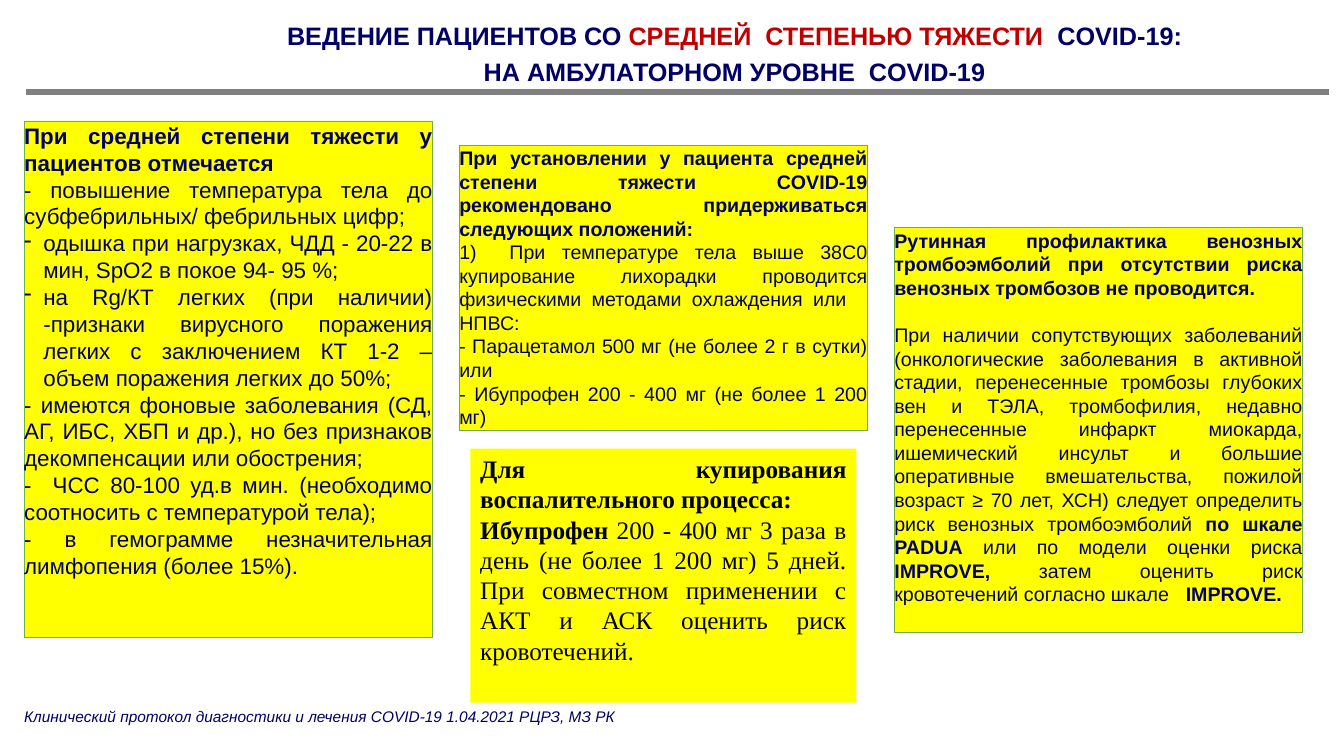
import pptx
import pptx.util
import lxml.etree
from pptx.dml.color import RGBColor
from pptx.enum.shapes import MSO_SHAPE
from pptx.enum.text import MSO_ANCHOR, PP_ALIGN
from pptx.oxml.ns import qn
from pptx.util import Inches, Pt

NAVY = RGBColor(0x00, 0x00, 0x66)
RED = RGBColor(0xC0, 0x00, 0x00)
BLACK = RGBColor(0x00, 0x00, 0x00)
WHITE = RGBColor(0xFF, 0xFF, 0xFF)
GRAY = RGBColor(0x80, 0x80, 0x80)
YELLOW = RGBColor(0xFF, 0xFF, 0x00)
GREEN = RGBColor(0x70, 0xAD, 0x47)

# Three-column grid, in inches
LEFT, RIGHT, COLUMN = 0.24, 12.92, 4.05
PITCH = (RIGHT - LEFT - COLUMN) / 2
HANG = 0.19

# Stars enclose bold parts; a leading bullet sign marks a hanging dash
SYMPTOMS = [
    "*При средней степени тяжести у пациентов отмечается*",
    "- повышение температура тела до субфебрильных/ фебрильных цифр;",
    "•одышка при нагрузках, ЧДД - 20-22 в мин, SpO2 в покое 94- 95 %;",
    "•на Rg/КТ легких (при наличии) -признаки вирусного поражения легких c "
    "заключением КТ 1-2 – объем поражения легких до 50%;",
    "- имеются фоновые заболевания (СД, АГ, ИБС, ХБП и др.), но без признаков "
    "декомпенсации или обострения;",
    "-  ЧСС 80-100 уд.в мин. (необходимо соотносить с температурой тела);",
    "- в гемограмме незначительная лимфопения (более 15%).",
]
FEVER = [
    "*При установлении у пациента средней степени тяжести COVID-19 "
    "рекомендовано придерживаться следующих положений:*",
    "1)  При температуре тела выше 38С0 купирование лихорадки проводится "
    "физическими методами охлаждения или   НПВС:",
    "- Парацетамол 500 мг (не более 2 г в сутки) или",
    "- Ибупрофен 200 - 400 мг (не более 1 200 мг)",
]
INFLAMMATION = [
    "*Для купирования воспалительного процесса:*",
    "*Ибупрофен* 200 - 400 мг 3 раза в день (не более 1 200 мг) 5 дней. "
    "При совместном применении с АКТ и АСК оценить риск кровотечений.",
]
THROMBOSIS = [
    "*Рутинная профилактика венозных тромбоэмболий при отсутствии риска "
    "венозных тромбозов не проводится.*",
    "При наличии сопутствующих заболеваний (онкологические заболевания в "
    "активной стадии, перенесенные тромбозы глубоких вен и ТЭЛА, тромбофилия, "
    "недавно перенесенные инфаркт миокарда, ишемический инсульт и большие "
    "оперативные вмешательства, пожилой возраст ≥ 70 лет, ХСН) следует "
    "определить риск венозных тромбоэмболий *по шкале PADUА *или по модели "
    "оценки риска *IMPROVE,* затем оценить риск кровотечений согласно "
    "шкале   *IMPROVE.*",
]
TITLE = [
    "ВЕДЕНИЕ ПАЦИЕНТОВ СО *СРЕДНЕЙ  СТЕПЕНЬЮ ТЯЖЕСТИ  *COVID-19:",
    "НА АМБУЛАТОРНОМ УРОВНЕ  COVID-19",
]
SOURCE = "Клинический протокол диагностики и лечения COVID-19 1.04.2021 РЦРЗ, МЗ РК"


def add_dash(para):
    properties = para._p.get_or_add_pPr()
    properties.set("marL", str(Inches(HANG)))
    properties.set("indent", str(-Inches(HANG)))
    lxml.etree.SubElement(properties, qn("a:buChar")).set("char", "-")


def write(frame, lines, size, align, color=NAVY, font="Arial"):
    """Fill the frame; yield each run with whether stars enclose it."""
    frame.word_wrap = True
    frame.vertical_anchor = MSO_ANCHOR.TOP
    for index, line in enumerate(lines):
        para = frame.add_paragraph() if index else frame.paragraphs[0]
        para.alignment = align
        if line.startswith("•"):
            add_dash(para)
        for part, text in enumerate(line.lstrip("•").split("*")):
            if text:
                span = para.add_run()
                span.text = text
                span.font.name, span.font.size = font, Pt(size)
                span.font.color.rgb = color
                yield span, part % 2 == 1


def add_box(page, box, fill, line=None, width=0.5):
    shape = page.shapes.add_shape(MSO_SHAPE.RECTANGLE, *map(Inches, box))
    shape.shadow.inherit = False
    shape.fill.solid()
    shape.fill.fore_color.rgb = fill
    if line is None:
        shape.line.fill.background()
    else:
        shape.line.color.rgb = line
        shape.line.width = Pt(width)
    return shape


def add_card(page, box, lines, size):
    """Bordered card whose text runs up to its edges."""
    frame = add_box(page, box, YELLOW, GREEN).text_frame
    frame.margin_left = frame.margin_right = frame.margin_bottom = 0
    frame.margin_top = Inches(0.01)
    for span, starred in write(frame, lines, size, PP_ALIGN.JUSTIFY):
        span.font.bold = starred
    return frame


def add_plain_card(page, box, lines):
    frame = add_box(page, box, YELLOW).text_frame
    for span, starred in write(frame, lines, 18, PP_ALIGN.JUSTIFY,
                               BLACK, "Times New Roman"):
        span.font.bold = starred


def add_title(page, box):
    frame = page.shapes.add_textbox(*map(Inches, box)).text_frame
    for span, starred in write(frame, TITLE, 18, PP_ALIGN.CENTER):
        span.font.bold = True
        if starred:
            span.font.color.rgb = RED
    for para in frame.paragraphs:
        para.line_spacing = Pt(22.6)
        para.space_before = Pt(3.3)


def add_source(page, box):
    frame = page.shapes.add_textbox(*map(Inches, box)).text_frame
    for span, _ in write(frame, [SOURCE], 11, PP_ALIGN.LEFT):
        span.font.italic = True


def main():
    deck = pptx.Presentation()
    deck.slide_width, deck.slide_height = Inches(13.33), Inches(7.5)
    page = deck.slides.add_slide(deck.slide_layouts[6])
    columns = [LEFT + PITCH * index for index in range(3)]

    # Heading and rule
    add_box(page, (LEFT, 0.87, 12.96, 0.09), GRAY, WHITE, 2)
    add_title(page, (1.89, 0.14, 10.79, 0.79))

    # Cards
    add_card(page, (columns[0], 1.2, COLUMN, 5.12), SYMPTOMS, 16)
    add_card(page, (columns[1], 1.44, COLUMN, 2.83), FEVER, 14)
    routine = add_card(page, (columns[2], 2.26, COLUMN, 4.01), THROMBOSIS, 14)
    routine.paragraphs[1].space_before = Pt(17)
    inset = 0.11
    add_plain_card(page, (columns[1] + inset, 4.45, COLUMN - 2 * inset, 2.52),
                   INFLAMMATION)

    # Source line
    add_source(page, (0.14, 6.97, 6.67, 0.47))
    deck.save("out.pptx")


if __name__ == "__main__":
    main()
